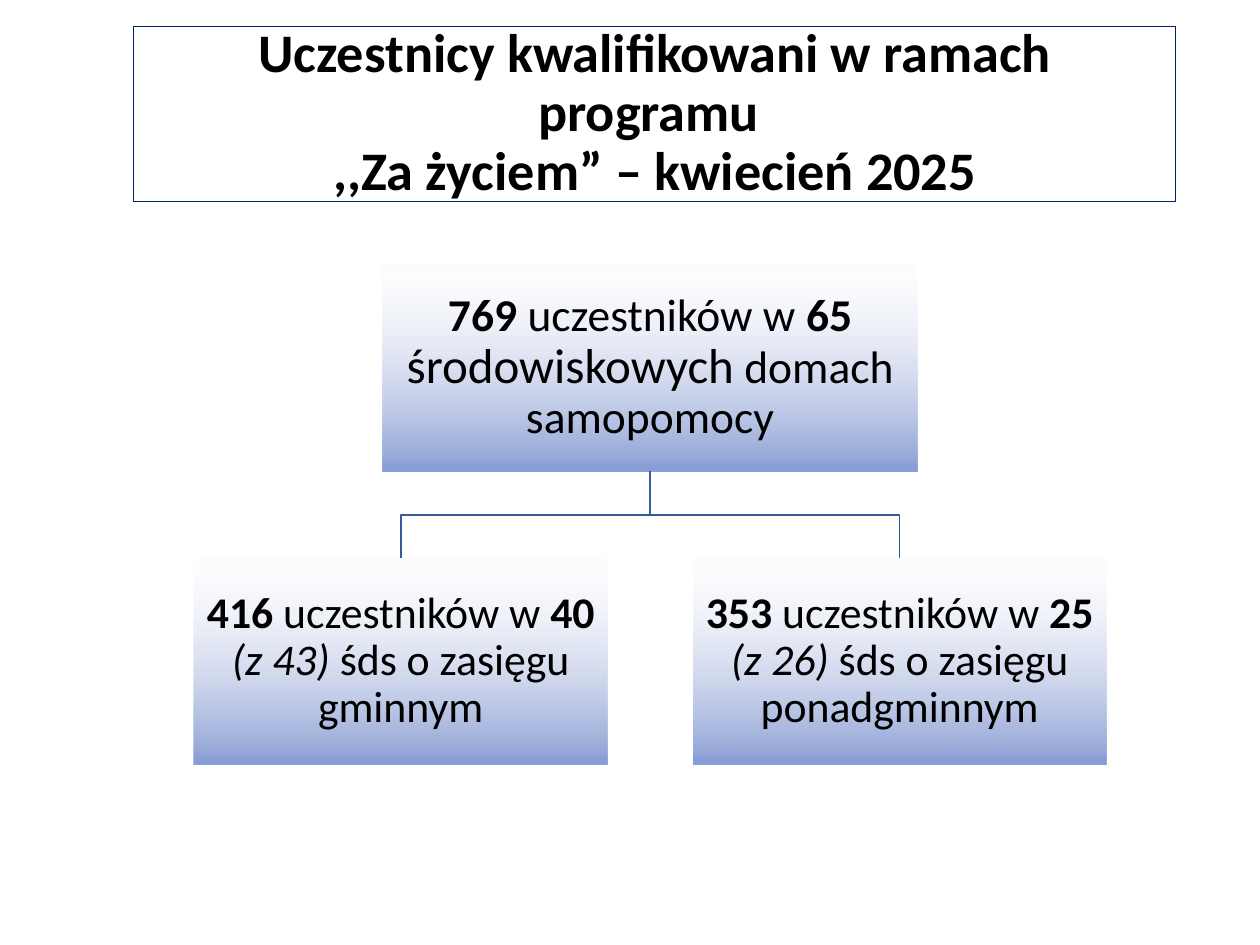
from lxml import etree
from pptx import Presentation
from pptx.dml.color import RGBColor
from pptx.enum.text import MSO_ANCHOR, MSO_AUTO_SIZE, PP_ALIGN
from pptx.enum.shapes import MSO_SHAPE
from pptx.oxml.ns import qn
from pptx.util import Inches, Pt

BLACK = RGBColor(0x00, 0x00, 0x00)
NAVY = RGBColor(0x00, 0x20, 0x60)
BRANCH_BLUE = RGBColor(0x36, 0x5B, 0x9D)
# Position in percent, colour, opacity in percent
GRADIENT_STOPS = [
    (4, RGBColor(0xF9, 0xFA, 0xFD), 30),
    (92, RGBColor(0x9A, 0xAB, 0xD9), 100),
    (97, RGBColor(0x88, 0x9E, 0xD7), 100),
]
BOLD = {"bold": True}
PLAIN = {"bold": False}
ITALIC = {"bold": False, "italic": True}


def set_attributes(target, values):
    for name, value in values.items():
        setattr(target, name, value)


def write_text(shape, runs, size, inset):
    """Fill the shape with one centred paragraph of (text, format) runs."""
    frame = shape.text_frame
    set_attributes(frame, {
        "word_wrap": True, "auto_size": MSO_AUTO_SIZE.NONE,
        "vertical_anchor": MSO_ANCHOR.MIDDLE,
        "margin_left": inset, "margin_right": inset,
        "margin_top": inset, "margin_bottom": inset,
    })
    paragraph = frame.paragraphs[0]
    set_attributes(paragraph, {"alignment": PP_ALIGN.CENTER, "line_spacing": 0.9})
    for text, run_format in runs:
        # A line feed in the text becomes a line break
        for index, line in enumerate(text.split("\n")):
            if index:
                paragraph.add_line_break()
            run = paragraph.add_run()
            run.text = line
            set_attributes(run.font, {"name": "Calibri", "size": Pt(size), **run_format})
            run.font.color.rgb = BLACK


def fill_gradient(shape):
    """Apply the vertical three-stop gradient with a translucent top."""
    shape.fill.gradient()
    gradient = shape._element.spPr.find(qn("a:gradFill"))
    for child in list(gradient):
        gradient.remove(child)
    stops = etree.SubElement(gradient, qn("a:gsLst"))
    for position, color, opacity in GRADIENT_STOPS:
        stop = etree.SubElement(stops, qn("a:gs"), pos=str(position * 1000))
        fill = etree.SubElement(stop, qn("a:srgbClr"), val=str(color))
        if opacity < 100:
            etree.SubElement(fill, qn("a:alpha"), val=str(opacity * 1000))
    etree.SubElement(gradient, qn("a:lin"), ang="5400000", scaled="0")


def add_title(slide, left, top, width, height):
    title = slide.shapes.title
    set_attributes(title, {"left": left, "top": top, "width": width, "height": height})
    title.line.color.rgb = NAVY
    title.line.width = Pt(0.75)
    text = "Uczestnicy kwalifikowani w ramach programu \n,,Za życiem” – kwiecień 2025"
    write_text(title, [(text, BOLD)], 31, Inches(0.05))
    title.text_frame.margin_left = title.text_frame.margin_right = Inches(0.1)


def add_box(slide, left, top, width, height, runs, size):
    box = slide.shapes.add_shape(MSO_SHAPE.RECTANGLE, left, top, width, height)
    box.shadow.inherit = False
    box.line.fill.background()
    fill_gradient(box)
    write_text(box, runs, size, Inches(0.08))
    return box


def add_branch(slide, parent, child):
    """Draw the elbow line from the parent's bottom to the child's top."""
    start_x = parent.left + parent.width // 2
    start_y = parent.top + parent.height
    end_x = child.left + child.width // 2
    middle_y = (start_y + child.top) // 2
    builder = slide.shapes.build_freeform(start_x, start_y)
    builder.add_line_segments(
        [(start_x, middle_y), (end_x, middle_y), (end_x, child.top)], close=False)
    branch = builder.convert_to_shape()
    branch.shadow.inherit = False
    branch.fill.background()
    branch.line.color.rgb = BRANCH_BLUE
    branch.line.width = Pt(1)


def add_hierarchy(slide, left, top, width, height):
    """Centre the total above two boxes at the left and right edges."""
    box_height = Inches(1.64)
    total_width, part_width = Inches(4.25), Inches(3.28)
    total = add_box(slide, left + (width - total_width) // 2, top, total_width, box_height, [
        ("769 ", BOLD), ("uczestników w ", PLAIN), ("65 ", BOLD),
        ("środowiskowych", {"bold": False, "size": Pt(28)}),
        (" domach samopomocy", PLAIN),
    ], 26)
    parts = [
        ("416 ", " 40 ", "(z 43) ", "śds o zasięgu gminnym"),
        ("353 ", " 25 ", "(z 26) ", "śds o zasięgu ponadgminnym"),
    ]
    for index, (people, homes, all_homes, area) in enumerate(parts):
        part = add_box(
            slide, left + index * (width - part_width), top + height - box_height,
            part_width, box_height,
            [(people, BOLD), ("uczestników w", PLAIN), (homes, BOLD),
             (all_homes, ITALIC), (area, PLAIN)], 25)
        add_branch(slide, total, part)


def main():
    presentation = Presentation()
    presentation.slide_width = Inches(10)
    presentation.slide_height = Inches(7.5)
    slide = presentation.slides.add_slide(presentation.slide_layouts[5])
    add_title(slide, Inches(1.06), Inches(0.21), Inches(8.27), Inches(1.39))
    add_hierarchy(slide, Inches(1.54), Inches(2.1), Inches(7.24), Inches(3.97))
    presentation.save("out.pptx")


if __name__ == "__main__":
    main()
